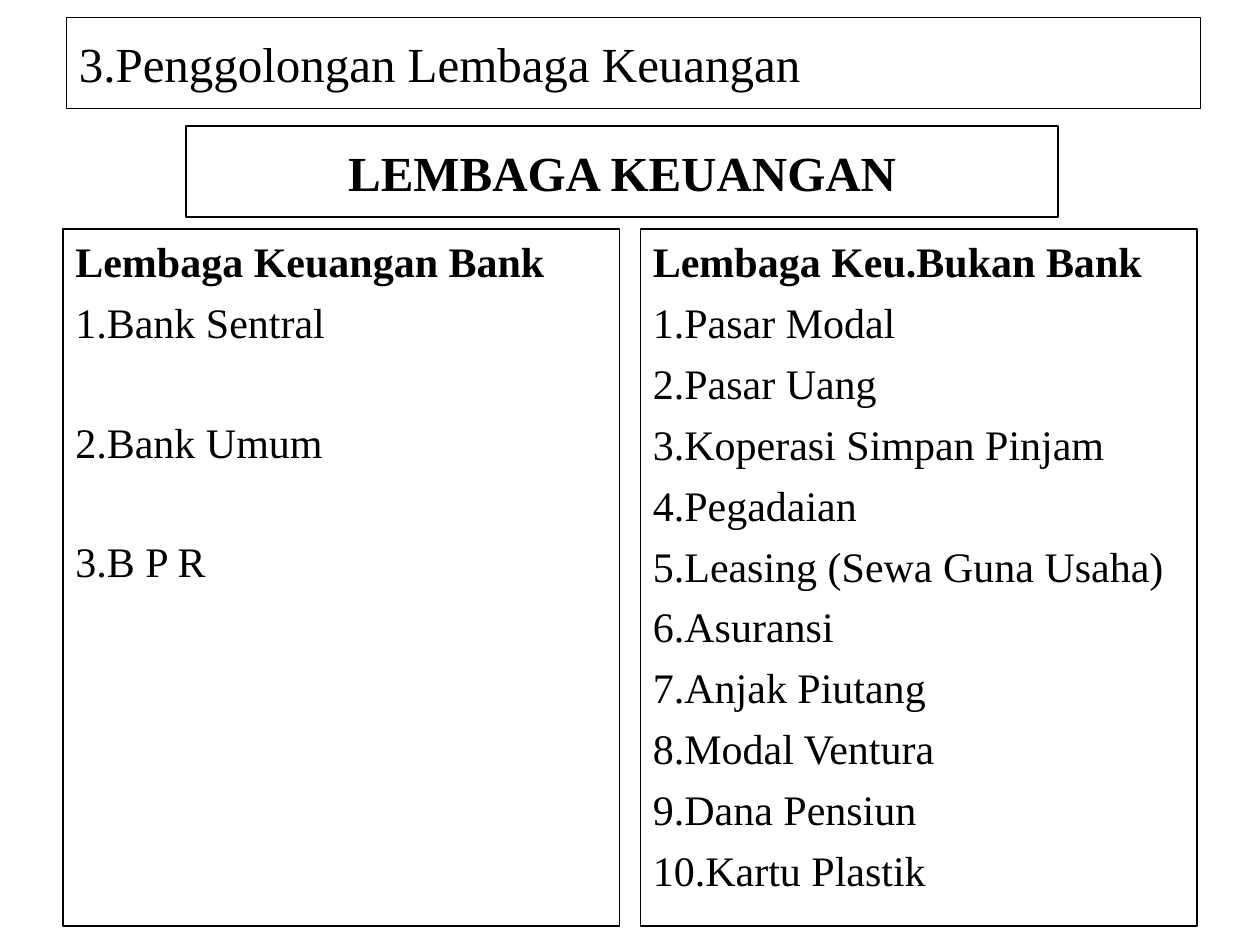
import pptx
import pptx.util
import pptx.dml.color
import pptx.enum.shapes
import pptx.enum.text

Pt = pptx.util.Pt
ALIGN = pptx.enum.text.PP_ALIGN
ANCHOR = pptx.enum.text.MSO_ANCHOR
COLORS = {"ink": "000000"}
FONT = "Times New Roman"

TOPIC = "3.Penggolongan Lembaga Keuangan"
HEADING = "LEMBAGA KEUANGAN"
COLUMNS = [
    {"title": "Lembaga Keuangan Bank", "lines_per_item": 2,
     "items": ["Bank Sentral", "Bank Umum", "B P R"]},
    {"title": "Lembaga Keu.Bukan Bank", "lines_per_item": 1,
     "items": ["Pasar Modal", "Pasar Uang", "Koperasi Simpan Pinjam",
               "Pegadaian", "Leasing (Sewa Guna Usaha)", "Asuransi",
               "Anjak Piutang", "Modal Ventura", "Dana Pensiun",
               "Kartu Plastik"]},
]

COLUMN_LEFT, COLUMN_TOP = 36, 131
COLUMN_WIDTH, COLUMN_HEIGHT = 318, 398
COLUMN_STEP = 330
LINE_GAP, LINE_PITCH = 6, 33.6
HANGING = 27


def ink():
    return pptx.dml.color.RGBColor.from_string(COLORS["ink"])


def add_box(page, left, top, width, height, anchor):
    box = page.shapes.add_shape(
        pptx.enum.shapes.MSO_SHAPE.RECTANGLE,
        Pt(left), Pt(top), Pt(width), Pt(height))
    box.shadow.inherit = False
    box.fill.background()
    box.line.color.rgb = ink()
    box.line.width = Pt(1)
    box.text_frame.word_wrap = True
    box.text_frame.vertical_anchor = anchor
    return box.text_frame


def write(para, text, size, bold=False, align=ALIGN.LEFT, gap=0):
    para.alignment = align
    para.space_before = Pt(gap)
    span = para.add_run()
    span.text = text
    formats = {"name": FONT, "size": Pt(size), "bold": bold}
    for name, value in formats.items():
        setattr(span.font, name, value)
    span.font.color.rgb = ink()


def add_column(page, left, column):
    frame = add_box(page, left, COLUMN_TOP, COLUMN_WIDTH, COLUMN_HEIGHT, ANCHOR.TOP)
    write(frame.paragraphs[0], column["title"], 24, bold=True, gap=LINE_GAP)
    for number, item in enumerate(column["items"], 1):
        skipped = column["lines_per_item"] - 1 if number > 1 else 0
        write(frame.add_paragraph(), f"{number}.{item}", 24,
              gap=LINE_GAP + skipped * LINE_PITCH)
    for para in frame.paragraphs:
        properties = para._p.get_or_add_pPr()
        properties.set("marL", str(Pt(HANGING)))
        properties.set("indent", str(-Pt(HANGING)))


def main():
    deck = pptx.Presentation()
    deck.slide_width, deck.slide_height = Pt(720), Pt(540)
    page = deck.slides.add_slide(deck.slide_layouts[6])

    heading = add_box(page, 106.5, 72, 498, 52, ANCHOR.MIDDLE)
    write(heading.paragraphs[0], HEADING, 28, bold=True, align=ALIGN.CENTER)
    for index, column in enumerate(COLUMNS):
        add_column(page, COLUMN_LEFT + index * COLUMN_STEP, column)
    topic = add_box(page, 38, 10, 648, 52, ANCHOR.MIDDLE)
    write(topic.paragraphs[0], TOPIC, 28)

    deck.save("out.pptx")


if __name__ == "__main__":
    main()
